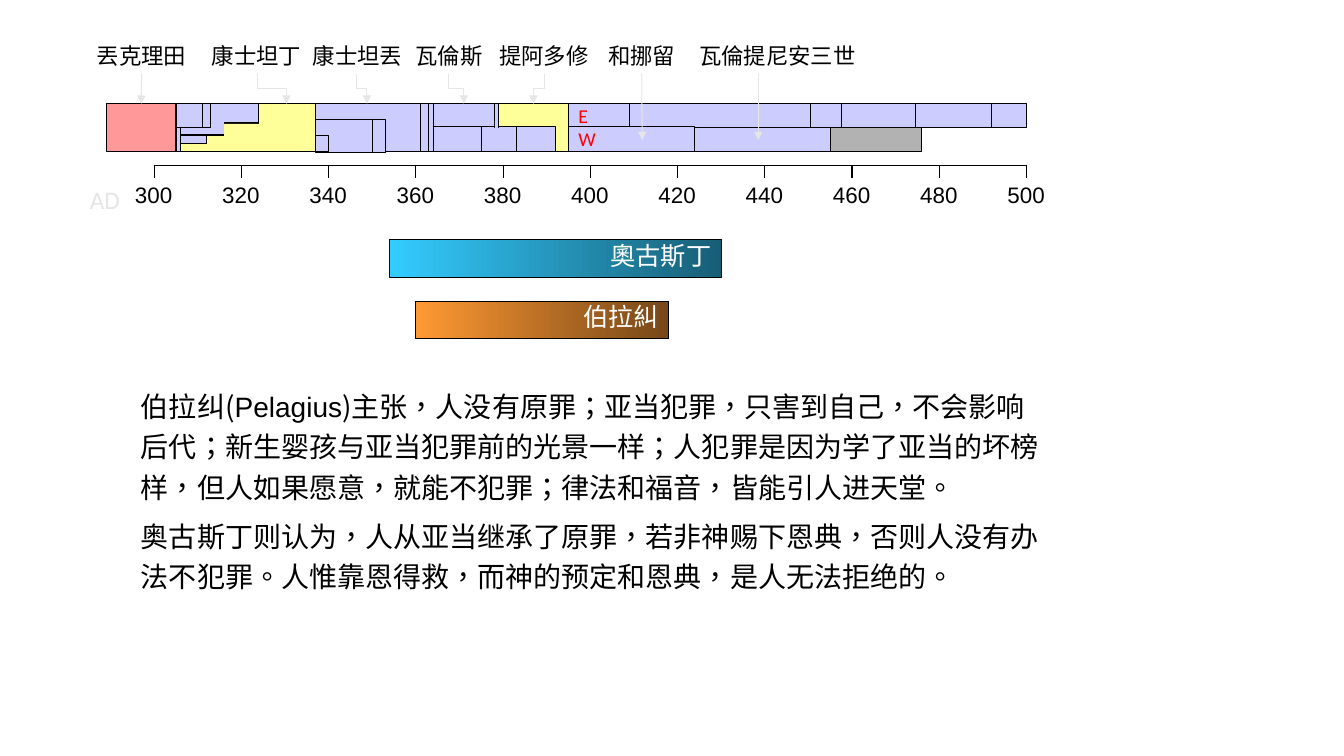
"""Builds a timeline slide of late Roman emperors, Augustine and Pelagius."""
from lxml import etree
from pptx import Presentation
from pptx import util as u
from pptx.dml.color import RGBColor
from pptx.enum import shapes, text
from pptx.oxml.ns import qn

PX = 9144
BLACK, WHITE, PALE, RED = "000000", "FFFFFF", "E7E6E6", "FF0000"
LILAC, YELLOW, PINK, GREY = "CCCCFF", "FFFF99", "FF9999", "B2B2B2"
CJK = "Noto Sans CJK SC"
AXIS_LEFT, AXIS_WIDTH, FIRST_YEAR, LAST_YEAR = 153, 865, 300, 500
FULL, UPPER, LOWER = (103, 47), (103, 24), (126, 24)

REIGNS = [
    (305, 306, LOWER, LILAC), (289, 305, FULL, PINK),
    (337, 361, FULL, LILAC), (361, 363, FULL, LILAC), (363, 364, FULL, LILAC),
    (424, 455, LOWER, LILAC), (455, 476, LOWER, GREY),
    (306, 337, FULL, YELLOW), (306, 312, (134, 8), LILAC),
    (306, 324, (103, 31), LILAC), (311, 313, UPPER, LILAC), (305, 311, UPPER, LILAC),
    (409, 450.5, UPPER, LILAC), (450.5, 457.5, UPPER, LILAC),
    (457.5, 474.5, UPPER, LILAC), (474.5, 492, UPPER, LILAC), (492, 500, UPPER, LILAC),
    (316, 324, (122, 12), YELLOW),
    (364, 378, UPPER, LILAC), (364, 375, LOWER, LILAC), (379, 395, FULL, YELLOW),
    (375, 383, LOWER, LILAC), (378, 379, UPPER, LILAC), (383, 392, LOWER, LILAC),
    (337, 350, (119, 32), LILAC), (350, 353, (119, 32), LILAC),
    (337, 340, (134, 16), LILAC),
]
SEAM_COVERS = [(316, 324, (123, 12), YELLOW), (378.1, 378.8, (120, 8), LILAC)]
EMPIRE_HALVES = [(395, 409, UPPER, "E"), (395, 424, LOWER, "W")]
THINKERS = [
    (354, 430, (238, 37), "奧古斯丁", "33CCFF", "185E76"),
    (360, 418, (299, 37), "伯拉糾", "FF9933", "764718"),
]
EMPERORS = [
    ("丟克理田", 96, 140, 140, 103), ("康士坦丁", 210, 255, 284, 103),
    ("康士坦丟", 310, 354, 364, 103), ("瓦倫斯", 412, 445, 460, 103),
    ("提阿多修", 495, 540, 529, 103), ("和挪留", 603, 637, 637, 139),
    ("瓦倫提尼安三世", 693, 752, 752, 139),
]
TEACHINGS = [
    [("伯拉纠(", CJK), ("Pelagius", "Arial"),
     (")主张，人没有原罪；亚当犯罪，只害到自己，不会影响后代；新生婴孩与亚当犯罪前的光景一样；"
      "人犯罪是因为学了亚当的坏榜样，但人如果愿意，就能不犯罪；律法和福音，皆能引人进天堂。", CJK)],
    [("奥古斯丁则认为，人从亚当继承了原罪，若非神赐下恩典，否则人没有办法不犯罪。"
      "人惟靠恩得救，而神的预定和恩典，是人无法拒绝的。", CJK)],
]


def rgb(value):
    """Turn a hex string into a colour."""
    return RGBColor.from_string(value)


def px(*lengths):
    """Turn px lengths into EMU."""
    return [round(length * PX) for length in lengths]


def year_x(year):
    """Give the px position of a year on the axis."""
    return AXIS_LEFT + (year - FIRST_YEAR) * AXIS_WIDTH / (LAST_YEAR - FIRST_YEAR)


def format_run(run, size, colour, face="Calibri"):
    """Set size, colour and typeface of a run."""
    run.font.size, run.font.name = u.Pt(size), face
    run.font.color.rgb = rgb(colour)
    if face == CJK:
        properties = run._r.get_or_add_rPr()
        properties.set("lang", "zh-TW")
        etree.SubElement(properties, qn("a:ea")).set("typeface", face)


def write(frame, words, size, colour, align, anchor):
    """Put one unwrapped line of text in a frame."""
    frame.word_wrap = False
    frame.vertical_anchor = anchor
    frame.text = words
    line = frame.paragraphs[0]
    line.alignment = align
    format_run(line.runs[0], size, colour)
    return line


def add_period(slide, start, end, band, fill=None, outlined=True):
    """Draw a rectangle that spans the given years."""
    top, height = band
    left, right = year_x(start), year_x(end)
    period = slide.shapes.add_shape(
        shapes.MSO_SHAPE.RECTANGLE, *px(left, top, right - left, height))
    period.shadow.inherit = False
    if fill:
        period.fill.solid()
        period.fill.fore_color.rgb = rgb(fill)
    if outlined:
        period.line.color.rgb = rgb(BLACK)
        period.line.width = u.Pt(0.75)
    else:
        period.line.fill.background()
    return period


def add_thinker(slide, start, end, band, name, light, dark):
    """Draw the shaded lifetime bar of a thinker."""
    life = add_period(slide, start, end, band)
    life.fill.gradient()
    life.fill.gradient_angle = 0
    for stop, colour in zip(life.fill.gradient_stops, (light, dark)):
        stop.color.rgb = rgb(colour)
    line = write(life.text_frame, name, 18, WHITE, text.PP_ALIGN.RIGHT, text.MSO_ANCHOR.TOP)
    line.line_spacing = 0.85


def add_label(slide, words, left, top, width, height, size=16, colour=BLACK):
    """Add a centred caption without side margins."""
    label = slide.shapes.add_textbox(*px(left, top, width, height))
    frame = label.text_frame
    frame.margin_left = frame.margin_right = 0
    frame.margin_top = frame.margin_bottom = px(4)[0]
    write(frame, words, size, colour, text.PP_ALIGN.CENTER, text.MSO_ANCHOR.MIDDLE)
    frame.auto_size = text.MSO_AUTO_SIZE.SHAPE_TO_FIT_TEXT
    return label


def add_pointer(slide, x1, y1, x2, y2):
    """Draw an arrow that leaves downwards, bending halfway if needed."""
    if x1 == x2:
        pointer = slide.shapes.add_connector(
            shapes.MSO_CONNECTOR.STRAIGHT, *px(x1, y1, x2, y2))
    else:
        side = 1 if x2 > x1 else -1
        mid_x, mid_y = (x1 + x2) / 2, (y1 + y2) / 2
        reach, rise = side * (y2 - y1) / 2, abs(x2 - x1) / 2
        pointer = slide.shapes.add_connector(
            shapes.MSO_CONNECTOR.ELBOW,
            *px(mid_x + reach, mid_y - rise, mid_x - reach, mid_y + rise))
        turn = 270 if side > 0 else 90
        pointer._element.spPr.find(qn("a:xfrm")).set("rot", str(turn * 60000))
    pointer.line.color.rgb = rgb(PALE)
    pointer.line.width = u.Pt(0.75)
    etree.SubElement(pointer.line._get_or_add_ln(), qn("a:tailEnd")).set("type", "triangle")
    etree.SubElement(pointer._element.spPr, qn("a:effectLst"))
    return pointer


def add_scale(slide, box, columns, border, fill=None, years=()):
    """Add a one-row table that serves as ticks or year numbers."""
    scale = slide.shapes.add_table(1, columns, *px(*box)).table
    scale.first_row = scale.horz_banding = False
    for cell in scale.iter_cells():
        properties = cell._tc.get_or_add_tcPr()
        for side in ("L", "R", "T", "B"):
            edge = etree.SubElement(properties, qn(f"a:ln{side}"), w=str(u.Pt(1)))
            paint = etree.SubElement(edge, qn("a:solidFill"))
            etree.SubElement(paint, qn("a:srgbClr")).set("val", border)
        if fill:
            cell.fill.solid()
            cell.fill.fore_color.rgb = rgb(fill)
        else:
            cell.fill.background()
    for cell, year in zip(scale.iter_cells(), years):
        cell.text_frame.text = str(year)
        number = cell.text_frame.paragraphs[0]
        number.alignment = text.PP_ALIGN.CENTER
        format_run(number.runs[0], 16, BLACK, "Arial")


def add_teachings(slide):
    """Add the two paragraphs that compare the teachings."""
    frame = slide.shapes.add_textbox(*px(130, 375, 920, 217)).text_frame
    frame.word_wrap = True
    for index, parts in enumerate(TEACHINGS):
        teaching = frame.add_paragraph() if index else frame.paragraphs[0]
        teaching.line_spacing, teaching.space_after = 1.2, u.Pt(6)
        for words, face in parts:
            run = teaching.add_run()
            run.text = words
            format_run(run, 20, BLACK, face)


def main():
    """Build and save the slide."""
    deck = Presentation()
    deck.slide_width, deck.slide_height = px(1333, 750)
    slide = deck.slides.add_slide(deck.slide_layouts[6])
    add_scale(slide, (AXIS_LEFT, 164, AXIS_WIDTH, 40), 10, BLACK)
    add_scale(slide, (109, 177, 952, 37), 11, WHITE, WHITE,
              range(FIRST_YEAR, LAST_YEAR + 1, 20))
    add_label(slide, "AD", 89, 180, 30, 36, 18, PALE)
    periods = [add_period(slide, *reign) for reign in REIGNS]
    for cover in SEAM_COVERS:
        add_period(slide, *cover, outlined=False)
    for start, end, band, letter in EMPIRE_HALVES:
        half = add_period(slide, start, end, band, LILAC)
        write(half.text_frame, letter, 14, RED, text.PP_ALIGN.LEFT, text.MSO_ANCHOR.MIDDLE)
    for name, left, start_x, end_x, end_y in EMPERORS:
        width = round(len(name) * 22.25)
        label = add_label(slide, name, left, 38, width, 35)
        pointer = add_pointer(slide, start_x, 73, end_x, end_y)
        if start_x == end_x and abs(left + width / 2 - start_x) < 1:
            pointer.begin_connect(label, 2)
        if name == "丟克理田":
            pointer.end_connect(periods[1], 0)
    for thinker in THINKERS:
        add_thinker(slide, *thinker)
    add_teachings(slide)
    deck.save("out.pptx")


if __name__ == "__main__":
    main()
